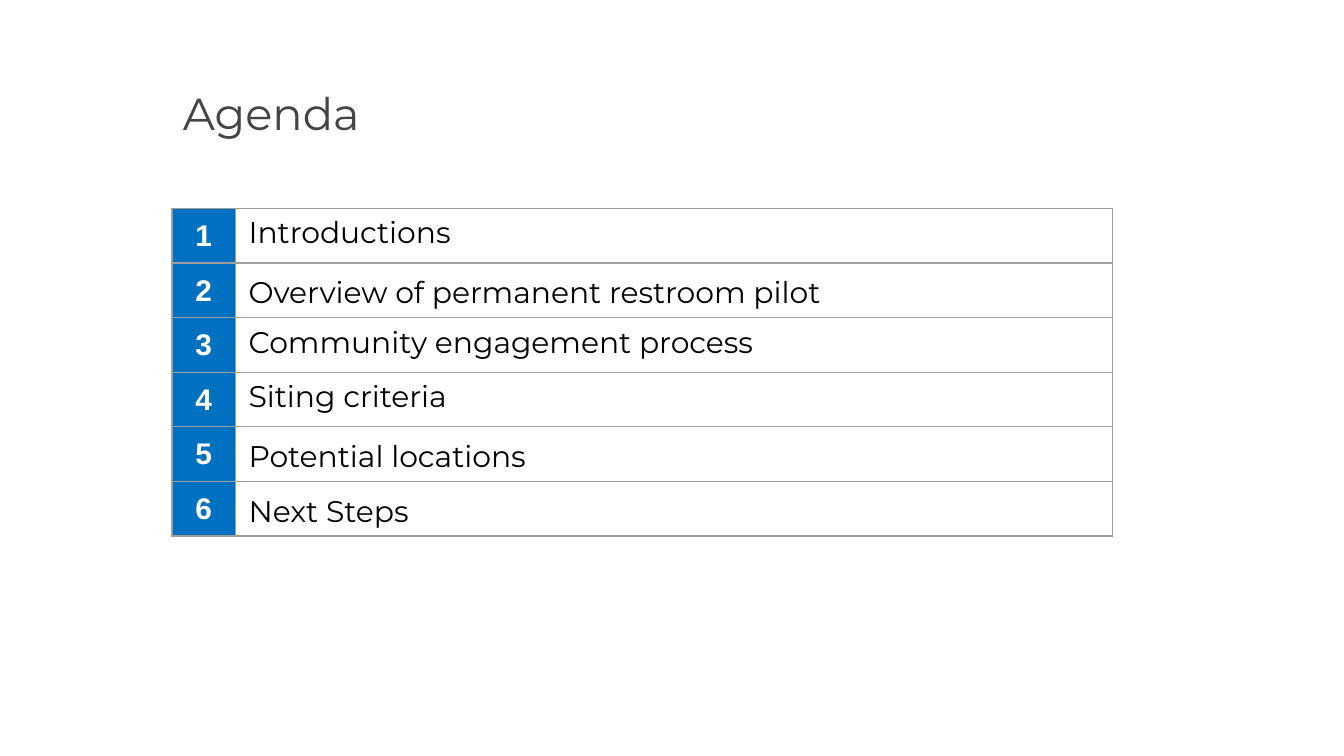
from dataclasses import dataclass
from typing import Any

from lxml import etree
from pptx import Presentation
from pptx import util as u
from pptx.dml.color import RGBColor
from pptx.enum import text
from pptx.oxml import ns

WHITE = RGBColor(0xFF, 0xFF, 0xFF)
BLACK = RGBColor(0x00, 0x00, 0x00)
BLUE = RGBColor(0x00, 0x70, 0xC0)
TITLE_GREY = RGBColor(0x44, 0x44, 0x44)
BORDER_GREY = RGBColor(0x9E, 0x9E, 0x9E)

TABLE_LEFT, TABLE_TOP = 92.16, 111.6
COLUMN_WIDTHS = (33.84, 470.16)
ROW_HEIGHT = 29.28

LOOSE = {"line_spacing": 1.15, "space_after": u.Pt(10)}
TITLE_FONT = {"name": "Montserrat", "size": u.Pt(24), "bold": False}
NUMBER_FONT = {"name": "Arial", "size": u.Pt(16), "bold": True}
TOPIC_FONT = {"name": "Montserrat", "size": u.Pt(16), "bold": False}


@dataclass
class AgendaItem:
    topic: str
    loose: bool = False


ITEMS = [
    AgendaItem("Introductions"),
    AgendaItem("Overview of permanent restroom pilot", loose=True),
    AgendaItem("Community engagement process"),
    AgendaItem("Siting criteria"),
    AgendaItem("Potential locations", loose=True),
    AgendaItem("Next Steps", loose=True),
]


def apply(target: Any, values: dict[str, Any]) -> None:
    for name, value in values.items():
        setattr(target, name, value)


def write(frame: Any, words: str, font: dict[str, Any], color: RGBColor,
          layout: dict[str, Any]) -> None:
    para = frame.paragraphs[0]
    apply(para, layout)
    span = para.add_run()
    span.text = words
    apply(span.font, font)
    span.font.color.rgb = color


def add_borders(cell: Any) -> None:
    properties = cell._tc.get_or_add_tcPr()
    for index, side in enumerate(("lnL", "lnR", "lnT", "lnB")):
        line = etree.Element(ns.qn(f"a:{side}"), w=str(u.Pt(0.75)))
        fill = etree.SubElement(line, ns.qn("a:solidFill"))
        etree.SubElement(fill, ns.qn("a:srgbClr"), val=str(BORDER_GREY))
        properties.insert(index, line)


def fill_cell(cell: Any, words: str, font: dict[str, Any], color: RGBColor,
              background: RGBColor, anchor: Any, layout: dict[str, Any]) -> None:
    apply(cell, {
        "margin_left": u.Pt(7.2),
        "margin_right": u.Pt(7.2),
        "margin_top": u.Pt(3.6),
        "margin_bottom": u.Pt(3),
        "vertical_anchor": anchor,
    })
    cell.fill.solid()
    cell.fill.fore_color.rgb = background
    add_borders(cell)
    write(cell.text_frame, words, font, color, layout)


def add_title(page: Any, words: str) -> None:
    title = page.shapes.title
    apply(title, {"left": u.Pt(90.72), "top": u.Pt(38.88),
                  "width": u.Pt(174.24), "height": u.Pt(43.2)})
    frame = title.text_frame
    apply(frame, {
        "margin_left": u.Pt(7.2),
        "margin_right": u.Pt(7.2),
        "margin_top": u.Pt(7.2),
        "margin_bottom": u.Pt(7.2),
        "word_wrap": True,
        "auto_size": text.MSO_AUTO_SIZE.NONE,
        "vertical_anchor": text.MSO_ANCHOR.TOP,
    })
    write(frame, words, TITLE_FONT, TITLE_GREY, {"alignment": text.PP_ALIGN.LEFT})


def add_agenda(page: Any, items: list[AgendaItem]) -> None:
    table = page.shapes.add_table(
        len(items), len(COLUMN_WIDTHS), u.Pt(TABLE_LEFT), u.Pt(TABLE_TOP),
        u.Pt(sum(COLUMN_WIDTHS)), u.Pt(ROW_HEIGHT * len(items))).table
    apply(table, {"first_row": False, "horz_banding": False})
    for column, width in zip(table.columns, COLUMN_WIDTHS):
        column.width = u.Pt(width)
    for index, item in enumerate(items):
        table.rows[index].height = u.Pt(ROW_HEIGHT)
        fill_cell(table.cell(index, 0), str(index + 1), NUMBER_FONT, WHITE, BLUE,
                  text.MSO_ANCHOR.MIDDLE, {"alignment": text.PP_ALIGN.CENTER})
        fill_cell(table.cell(index, 1), item.topic, TOPIC_FONT, BLACK, WHITE,
                  text.MSO_ANCHOR.TOP, LOOSE if item.loose else {})


def main() -> None:
    deck = Presentation()
    apply(deck, {"slide_width": u.Pt(720), "slide_height": u.Pt(405)})
    page = deck.slides.add_slide(deck.slide_layouts.get_by_name("Title Only"))
    add_title(page, "Agenda")
    add_agenda(page, ITEMS)
    deck.save("out.pptx")


if __name__ == "__main__":
    main()
